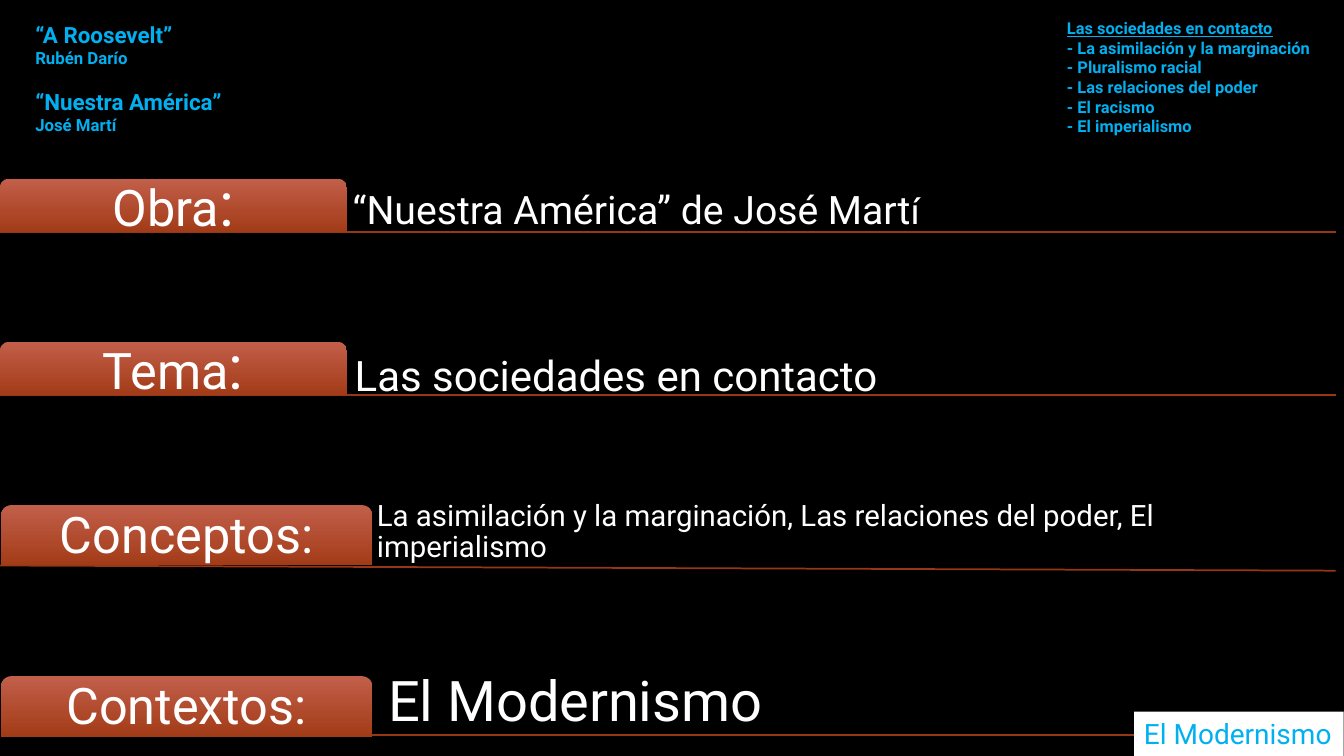
import pptx
import pptx.util
import pptx.dml.color
import pptx.enum.shapes
import pptx.enum.text
from lxml import etree

Cm, Pt = pptx.util.Cm, pptx.util.Pt
RGBColor = pptx.dml.color.RGBColor
Kind = pptx.enum.shapes.MSO_SHAPE
Anchor = pptx.enum.text.MSO_ANCHOR
Align = pptx.enum.text.PP_ALIGN

BLACK = RGBColor(0x00, 0x00, 0x00)
WHITE = RGBColor(0xFF, 0xFF, 0xFF)
SKY = RGBColor(0x00, 0xB0, 0xF0)
RUST = RGBColor(0x97, 0x37, 0x16)
LIGHT = RGBColor(0xC2, 0x5F, 0x4A)
DARK = RGBColor(0xA2, 0x3B, 0x17)

# Runs are (text, size, font); boxes are left, top, width, height in cm.
ROWS = [
    dict(label=[("Obra", 36, "Roboto"), (":", 44, "Roboto")],
         tab=(0, 4.5, 8.74, 1.35), rule=(0, 5.84, 33.66, 5.84),
         value=[("“Nuestra América” de José Mart", 28, "Roboto"), ("í", 28, "Calibri")],
         box=(8.74, 4.67, 24.89, 1.35), pad=0.15),
    dict(label=[("Tema", 36, "Roboto"), (":", 44, "Roboto")],
         tab=(0, 8.61, 8.74, 1.35), rule=(0, 9.96, 33.66, 9.96),
         value=[("Las sociedades en contacto", 30, "Roboto")],
         box=(8.74, 8.94, 24.89, 1.35), pad=0.2),
    dict(label=[("Conceptos:", 36, "Roboto")],
         tab=(0.03, 12.73, 9.35, 1.52), rule=(0, 14.25, 33.66, 14.38),
         value=[("La asimilación y la marginación, Las relaciones del poder, "
                 "El imperialismo", 21, "Roboto")],
         box=(9.4, 12.75, 24.05, 1.57), pad=0.1),
    dict(label=[("Contextos:", 36, "Roboto")],
         tab=(0.03, 17.04, 9.35, 1.52), rule=(0.15, 18.52, 33.81, 18.52),
         value=[("El Modernismo", 40, "Roboto")],
         box=(9.53, 16.64, 11.13, 1.96), pad=None),
]
WORKS = [("“A Roosevelt”", "Rubén Darío"), ("“Nuestra América”", "José Martí")]
THEME = "Las sociedades en contacto"
IDEAS = ["La asimilación y la marginación", "Pluralismo racial",
         "Las relaciones del poder", "El racismo", "El imperialismo"]

deck = pptx.Presentation()
deck.slide_width, deck.slide_height = Cm(33.87), Cm(19.05)
slide = deck.slides.add_slide(deck.slide_layouts[6])
slide.background.fill.solid()
slide.background.fill.fore_color.rgb = BLACK


def write(shape, paras, color=WHITE, bold=False, align=Align.LEFT,
          anchor=Anchor.TOP, pad=None, space=None, wrap=True):
    """Fill a shape with paragraphs, each a list of runs."""
    frame = shape.text_frame
    frame.word_wrap, frame.vertical_anchor = wrap, anchor
    if pad is not None:
        frame.margin_left = frame.margin_right = Cm(pad)
        frame.margin_top = frame.margin_bottom = Cm(pad)
    for i, runs in enumerate(paras):
        para = frame.add_paragraph() if i else frame.paragraphs[0]
        para.alignment = align
        if space:
            para.line_spacing = space
        for text, size, face in runs:
            run = para.add_run()
            run.text = text
            font = run.font
            font.size, font.name, font.bold = Pt(size), face, bold
            font.color.rgb = color
    return frame


def add_text(box, paras, **style):
    return write(slide.shapes.add_textbox(*map(Cm, box)), paras, **style)


def add_shape(kind, box):
    shape = slide.shapes.add_shape(kind, *map(Cm, box))
    shape.shadow.inherit = False
    shape.line.fill.background()
    return shape


def add_rule(ends):
    rule = slide.shapes.add_connector(
        pptx.enum.shapes.MSO_CONNECTOR.STRAIGHT, *map(Cm, ends))
    rule.line.color.rgb = RUST
    rule.line.width = Pt(1.25)
    etree.SubElement(rule.line._get_or_add_ln().getparent(),
                     pptx.oxml.ns.qn("a:effectLst"))


def add_tab(box, label):
    tab = add_shape(Kind.ROUND_2_SAME_RECTANGLE, box)
    tab.adjustments[0], tab.adjustments[1] = 0.167, 0
    tab.fill.gradient()
    tab.fill.gradient_angle = 270
    for stop, color in zip(tab.fill.gradient_stops, (LIGHT, DARK)):
        stop.color.rgb = color
    write(tab, [label], align=Align.CENTER, anchor=Anchor.MIDDLE, pad=0.18, space=0.9)


for row in ROWS:
    add_rule(row["rule"])
for row in ROWS:
    add_tab(row["tab"], row["label"])
    if row["pad"] is None:
        add_text(row["box"], [row["value"]])
    else:
        add_text(row["box"], [row["value"]], anchor=Anchor.BOTTOM,
                 pad=row["pad"], space=0.9)

ideas = [[(THEME, 11.7, "Roboto")]] + [[("- " + idea, 11.7, "Roboto")] for idea in IDEAS]
frame = add_text((26.64, -0.28, 8.33, 3.84), ideas, color=SKY, bold=True,
                 anchor=Anchor.BOTTOM)
frame.paragraphs[0].runs[0].font.underline = True

works = [[(text, size, "Roboto")] for work in WORKS for text, size in zip(work, (16, 12))]
frame = add_text((0.64, 0.41, 9.47, 3.18), works, color=SKY, bold=True)
frame.paragraphs[2].space_before = Pt(14)

tag = add_shape(Kind.RECTANGLE, (28.58, 17.93, 5.28, 1.12))
tag.fill.solid()
tag.fill.fore_color.rgb = WHITE
write(tag, [[("El Modernismo", 20, "Roboto")]], color=SKY, wrap=False)

deck.save("out.pptx")
